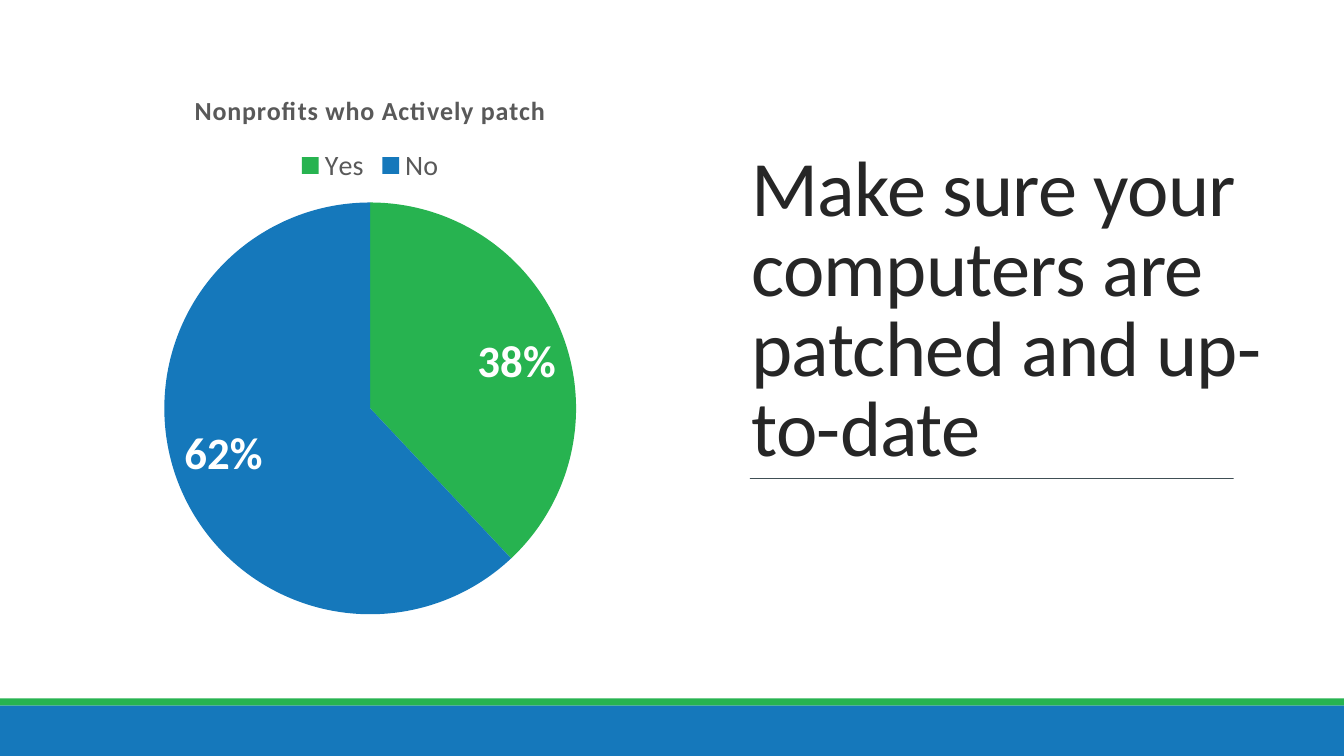
"""Build the slide on how many nonprofits actively patch their computers."""
from dataclasses import dataclass

import lxml.etree
import pptx
import pptx.chart.data
import pptx.dml.color
import pptx.enum.chart
import pptx.enum.shapes
import pptx.enum.text
import pptx.oxml.ns
import pptx.util
from pptx.util import Cm

RGB = pptx.dml.color.RGBColor.from_string


@dataclass(frozen=True)
class Theme:
    font: str = "Calibri"
    green: str = "27B350"
    blue: str = "1578BB"
    white: str = "FFFFFF"
    headline: str = "262626"
    rule: str = "2C3C43"
    muted: str = "595959"
    headline_size: float = 56
    title_size: float = 18.6
    legend_size: float = 20
    label_size: float = 32


theme = Theme()


def style(font, size, color, bold=False):
    font.name = theme.font
    font.size = pptx.util.Pt(size)
    font.color.rgb = RGB(color)
    font.bold = bold


deck = pptx.Presentation()
deck.slide_width = Cm(33.87)
deck.slide_height = Cm(19.05)
slide = deck.slides.add_slide(deck.slide_layouts[6])

headline = slide.shapes.add_textbox(Cm(18.69), Cm(1.78), Cm(13.36), Cm(10.24)).text_frame
headline.word_wrap = True
headline.vertical_anchor = pptx.enum.text.MSO_ANCHOR.BOTTOM
message = headline.paragraphs[0]
message.text = "Make sure your computers are patched and up-to-date"
message.line_spacing = 0.85
style(message.font, theme.headline_size, theme.headline)
message.runs[0]._r.get_or_add_rPr().set("spc", "-50")

rule = slide.shapes.add_connector(
    pptx.enum.shapes.MSO_CONNECTOR.STRAIGHT, Cm(18.9), Cm(12.06), Cm(31.09), Cm(12.06))
rule.line.width = pptx.util.Pt(0.5)
rule.line.color.rgb = RGB(theme.rule)
rule_color = rule.line._ln.find(".//" + pptx.oxml.ns.qn("a:srgbClr"))
lxml.etree.SubElement(rule_color, pptx.oxml.ns.qn("a:alpha"), val="90000")
lxml.etree.SubElement(rule._element.spPr, pptx.oxml.ns.qn("a:effectLst"))

for top, height, color in ((17.6, 0.18, theme.green), (17.78, 1.27, theme.blue)):
    band = slide.shapes.add_shape(
        pptx.enum.shapes.MSO_SHAPE.RECTANGLE, 0, Cm(top), deck.slide_width, Cm(height))
    band.shadow.inherit = False
    band.fill.solid()
    band.fill.fore_color.rgb = RGB(color)
    band.line.fill.background()

survey = pptx.chart.data.CategoryChartData()
survey.categories = ["Yes", "No"]
survey.add_series("Nonprofits who Actively patch", (38, 62))
chart = slide.shapes.add_chart(
    pptx.enum.chart.XL_CHART_TYPE.PIE, Cm(1.75), Cm(1.78), Cm(15.16), Cm(14.05), survey).chart
chart.font.name = theme.font
chart.font.size = pptx.util.Pt(10)

chart.has_title = True
chart_title = chart.chart_title.text_frame.paragraphs[0]
chart_title.text = "Nonprofits who Actively patch"
style(chart_title.font, theme.title_size, theme.muted, bold=True)
chart_title.runs[0]._r.get_or_add_rPr().set("spc", "50")

chart.has_legend = True
chart.legend.position = pptx.enum.chart.XL_LEGEND_POSITION.TOP
chart.legend.include_in_layout = False
style(chart.legend.font, theme.legend_size, theme.muted)

pie = chart.plots[0]
pie.vary_by_categories = True
for index, color in enumerate((theme.green, theme.blue)):
    slice_format = pie.series[0].points[index].format
    slice_format.fill.solid()
    slice_format.fill.fore_color.rgb = RGB(color)
    slice_format.line.fill.background()

labels = pie.series[0].data_labels
labels.show_percentage = True
labels.show_value = False
labels.number_format = "0%"
labels.number_format_is_linked = False
labels.position = pptx.enum.chart.XL_LABEL_POSITION.INSIDE_END
style(labels.font, theme.label_size, theme.white, bold=True)

deck.save("out.pptx")
